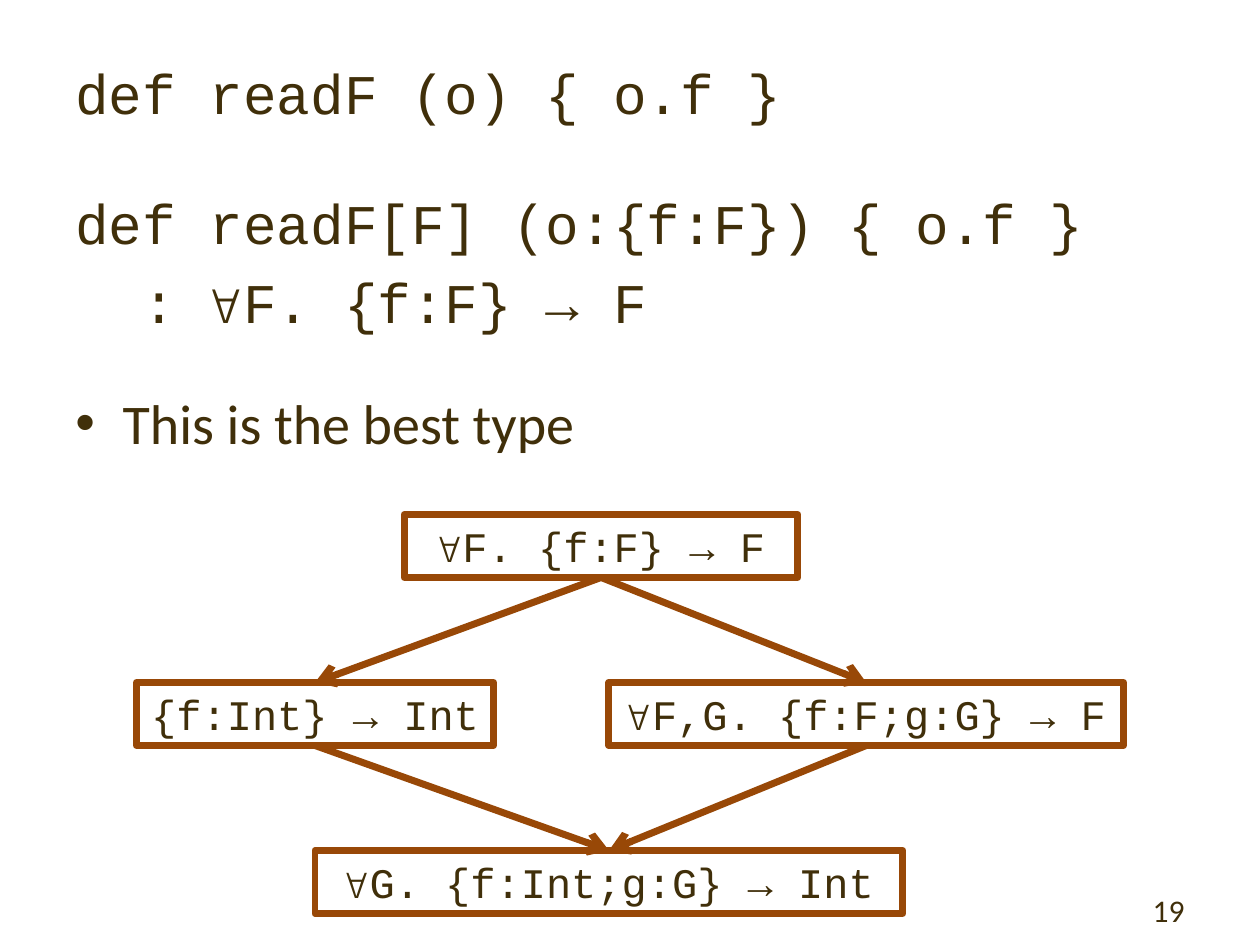
from lxml import etree
from pptx import Presentation
from pptx.dml.color import RGBColor
from pptx.enum.shapes import MSO_CONNECTOR, MSO_SHAPE
from pptx.enum.text import MSO_ANCHOR, PP_ALIGN as Align
from pptx.oxml.ns import qn
from pptx.util import Pt

COLORS = {"text": "402F0A", "line": "984807", "box": "FFFFFF"}
CODE, BODY = "Courier New", "Calibri"
BOTTOM, TOP = 2, 0  # connection sites of a rectangle


def rgb(name):
    return RGBColor.from_string(COLORS[name])


def style(p, size, font, before=0.0, align=Align.LEFT):
    p.alignment = align
    p.space_before = Pt(before)
    for r in p.runs:
        r.font.size, r.font.name = Pt(size), font
        r.font.color.rgb = rgb("text")


def add_text(s, x, y, w, h):
    tf = s.shapes.add_textbox(Pt(x), Pt(y), Pt(w), Pt(h)).text_frame
    tf.word_wrap = True
    return tf


def add_bullet(p, indent):
    pPr = p._p.get_or_add_pPr()
    pPr.set("marL", str(Pt(indent)))
    pPr.set("indent", str(-Pt(indent)))
    etree.SubElement(pPr, qn("a:buFont")).set("typeface", "Arial")
    etree.SubElement(pPr, qn("a:buChar")).set("char", "•")


def style_line(line):
    line.color.rgb = rgb("line")
    line.width = Pt(4)
    return line._get_or_add_ln()


def add_type_box(s, text, x, y, w):
    sp = s.shapes.add_shape(MSO_SHAPE.RECTANGLE, Pt(x), Pt(y), Pt(w), Pt(36))
    sp.shadow.inherit = False
    sp.fill.solid()
    sp.fill.fore_color.rgb = rgb("box")
    etree.SubElement(style_line(sp.line), qn("a:round"))
    tf = sp.text_frame
    tf.word_wrap = True
    tf.vertical_anchor = MSO_ANCHOR.TOP
    tf.text = text
    style(tf.paragraphs[0], 24, CODE, 4.8, Align.CENTER)
    return sp


def add_arrow(s, upper, lower):
    cn = s.shapes.add_connector(MSO_CONNECTOR.STRAIGHT, 0, 0, 0, 0)
    cn.begin_connect(upper, BOTTOM)
    cn.end_connect(lower, TOP)
    ln = style_line(cn.line)
    etree.SubElement(ln, qn("a:tailEnd")).set("type", "arrow")
    etree.SubElement(cn._element.spPr, qn("a:effectLst"))


def add_body(s):
    lines = [  # text, font, space before
        ("def readF (o) { o.f }", CODE, 6.4),
        ("def readF[F] (o:{f:F}) { o.f }", CODE, 36),
        ("  : ∀F. {f:F} → F", CODE, 6.4),
        ("This is the best type", BODY, 31),
    ]
    tf = add_text(s, 36, 30, 648, 486)
    tf.text = "\n".join(text for text, _, _ in lines)
    for p, (_, font, before) in zip(tf.paragraphs, lines):
        style(p, 32, font, before)
    add_bullet(tf.paragraphs[-1], 27)


def add_page_number(s):
    tf = add_text(s, 516, 505.5, 168, 29)
    tf.text = "19"
    style(tf.paragraphs[0], 18, BODY, align=Align.RIGHT)


def add_lattice(s):
    best = add_type_box(s, "∀F. {f:F} → F", 231, 294, 225)
    middle = [
        add_type_box(s, "∀F,G. {f:F;g:G} → F", 348, 390, 294),
        add_type_box(s, "{f:Int} → Int", 78, 390, 204),
    ]
    least = add_type_box(s, "∀G. {f:Int;g:G} → Int", 180, 486, 336)
    for box in middle:
        add_arrow(s, best, box)
        add_arrow(s, box, least)


def main():
    prs = Presentation()
    prs.slide_width, prs.slide_height = Pt(720), Pt(540)
    s = prs.slides.add_slide(prs.slide_layouts[6])
    # Code and statement
    add_body(s)
    add_page_number(s)
    # Types ordered from most general to least
    add_lattice(s)
    prs.save("out.pptx")


if __name__ == "__main__":
    main()
